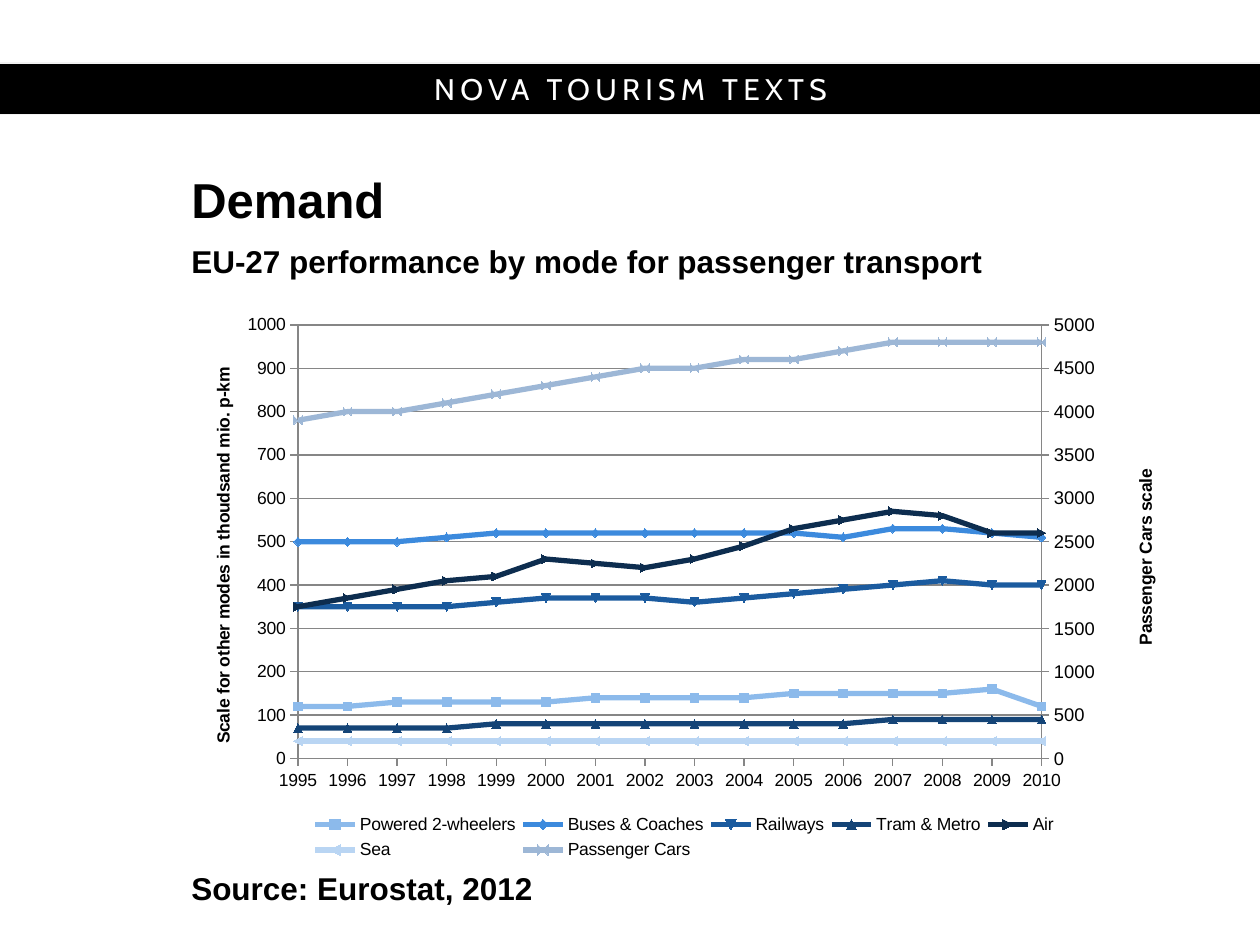
from copy import deepcopy

from lxml import etree
from pptx import Presentation
from pptx.chart.axis import ValueAxis
from pptx.chart.data import CategoryChartData as ChartData
from pptx.dml.color import RGBColor as RGB
from pptx.enum.chart import XL_CHART_TYPE as Kind, XL_LEGEND_POSITION as Side
from pptx.enum.chart import XL_TICK_MARK as Tick
from pptx.enum.shapes import MSO_SHAPE as Shape
from pptx.enum.text import MSO_ANCHOR as Anchor, PP_ALIGN as Align
from pptx.oxml.ns import qn
from pptx.util import Inches, Pt

COLORS = {
    "black": "000000", "white": "FFFFFF", "edge": "F2F2F2", "grid": "868686",
    "Powered 2-wheelers": "8CBAEB", "Buses & Coaches": "3C8ADD",
    "Railways": "1B5B9F", "Tram & Metro": "144477", "Air": "0D2D4F",
    "Sea": "B9D5F3", "Passenger Cars": "9DB7D6",
}
YEARS = [str(year) for year in range(1995, 2011)]
CARS = "Passenger Cars"
MODES = {
    "Powered 2-wheelers": [120, 120, 130, 130, 130, 130, 140, 140,
                           140, 140, 150, 150, 150, 150, 160, 120],
    "Buses & Coaches": [500, 500, 500, 510, 520, 520, 520, 520,
                        520, 520, 520, 510, 530, 530, 520, 510],
    "Railways": [350, 350, 350, 350, 360, 370, 370, 370,
                 360, 370, 380, 390, 400, 410, 400, 400],
    "Tram & Metro": [70] * 4 + [80] * 8 + [90] * 4,
    "Air": [350, 370, 390, 410, 420, 460, 450, 440,
            460, 490, 530, 550, 570, 560, 520, 520],
    "Sea": [40] * 16,
    CARS: [3900, 4000, 4000, 4100, 4200, 4300, 4400, 4500,
           4500, 4600, 4600, 4700, 4800, 4800, 4800, 4800],
}


def color(name):
    return RGB.from_string(COLORS[name])


def set_font(font, size, name="Arial", tint="black", bold=True):
    font.name, font.size, font.bold = name, Pt(size), bold
    font.color.rgb = color(tint)


def add_band(slide, text):
    band = slide.shapes.add_shape(Shape.RECTANGLE, Inches(-0.08), Inches(0.5),
                                  Inches(10.17), Inches(0.41))
    band.shadow.inherit = False
    band.fill.solid()
    band.fill.fore_color.rgb = color("black")
    band.line.color.rgb = color("edge")
    band.line.width = Pt(0.75)
    band.text_frame.vertical_anchor = Anchor.MIDDLE
    par = band.text_frame.paragraphs[0]
    par.text, par.alignment = text, Align.CENTER
    set_font(par.font, 17, "Cabin", "white", False)
    par.font._rPr.set("spc", "300")


def add_text(slide, text, top, high, size):
    box = slide.shapes.add_textbox(Inches(1.42), Inches(top),
                                   Inches(7.87), Inches(high))
    box.text_frame.word_wrap = True
    par = box.text_frame.paragraphs[0]
    par.text = text
    set_font(par.font, size)
    return box.text_frame


def add_node(parent, tag, val):
    return etree.SubElement(parent, qn(tag), val=str(val))


def set_layout(node, index, inner=False, **place):
    """Place a chart part by fractions of the chart's size."""
    for old in node.findall(qn("c:layout")):
        node.remove(old)
    layout = etree.Element(qn("c:layout"))
    node.insert(index, layout)
    manual = etree.SubElement(layout, qn("c:manualLayout"))
    if inner:
        add_node(manual, "c:layoutTarget", "inner")
    for key in "xy":
        add_node(manual, f"c:{key}Mode", "edge")
    for key, val in place.items():
        add_node(manual, f"c:{key}", val)


def split_axis(chart):
    """Move the last series to a second line plot with its own axes."""
    plot = chart.plots[0]._element
    area = plot.getparent()
    cat, val = area.find(qn("c:catAx")), area.find(qn("c:valAx"))
    if val.find(qn("c:crossBetween")) is None:
        between = etree.Element(qn("c:crossBetween"))
        val.find(qn("c:crosses")).addnext(between)
    val.find(qn("c:crossBetween")).set("val", "midCat")

    twin, cat2, val2 = deepcopy(plot), deepcopy(cat), deepcopy(val)
    for ser in twin.findall(qn("c:ser"))[:-1]:
        twin.remove(ser)
    plot.remove(plot.findall(qn("c:ser"))[-1])
    plot.addnext(twin)
    val.addnext(val2)
    val2.addnext(cat2)

    ids = ("5001", "5002")
    for node, new in zip(twin.findall(qn("c:axId")), ids):
        node.set("val", new)
    for axis, own, other in ((cat2, *ids), (val2, *ids[::-1])):
        axis.find(qn("c:axId")).set("val", own)
        axis.find(qn("c:crossAx")).set("val", other)
    cat2.find(qn("c:delete")).set("val", "1")
    val2.find(qn("c:axPos")).set("val", "r")
    val2.find(qn("c:crosses")).set("val", "max")
    return ValueAxis(val2)


def style_axis(axis, size):
    axis.major_tick_mark, axis.minor_tick_mark = Tick.OUTSIDE, Tick.NONE
    axis.format.line.color.rgb = color("grid")
    set_font(axis.tick_labels.font, size, bold=False)


def style_scale(axis, size, top, step, title, x, y):
    style_axis(axis, size)
    axis.minimum_scale, axis.maximum_scale = 0, top
    axis.major_unit = step
    frame = axis.axis_title.text_frame
    frame.text = title
    set_font(frame.paragraphs[0].font, 10)
    frame._txBody.bodyPr.set("rot", "-5400000")
    frame._txBody.bodyPr.set("vert", "horz")
    set_layout(axis.axis_title._element, 1, x=x, y=y)


def add_lines(slide):
    data = ChartData(number_format="General")
    data.categories = YEARS
    for name, vals in MODES.items():
        data.add_series(name, vals)
    chart = slide.shapes.add_chart(
        Kind.LINE_MARKERS, Inches(1.42), Inches(2.4),
        Inches(7.87), Inches(4.47), data).chart
    chart.has_title = False
    set_font(chart.font, 18, bold=False)
    chart.plots[0].vary_by_categories = False
    for ser in chart.plots[0].series:
        ser.smooth = False
        ser.format.line.width = Pt(3)
        ser.format.line.color.rgb = color(ser.name)
        fill = ser.marker.format.fill
        fill.solid()
        fill.fore_color.rgb = color(ser.name)

    left = chart.value_axis
    left.has_major_gridlines = False
    right = split_axis(chart)
    left.has_major_gridlines = True
    left.major_gridlines.format.line.color.rgb = color("grid")
    style_axis(chart.category_axis, 10)
    style_scale(left, 10, 1000, 100,
                "Scale for other modes in thoudsand mio. p-km", 0.03, 0.11)
    style_scale(right, 10.5, 5000, 500, "Passenger Cars scale", 0.96, 0.29)

    chart.has_legend = True
    chart.legend.position = Side.BOTTOM
    chart.legend.include_in_layout = False
    set_font(chart.legend.font, 10, bold=False)
    set_layout(chart.legend._element, 1, x=0.13, y=0.9, w=0.76, h=0.1)
    area = chart.plots[0]._element.getparent()
    set_layout(area, 0, True, x=0.12, y=0.04, w=0.75, h=0.77)


def main():
    deck = Presentation()
    deck.slide_width, deck.slide_height = Inches(10), Inches(7.5)
    slide = deck.slides.add_slide(deck.slide_layouts[6])
    add_band(slide, "NOVA TOURISM TEXTS")
    add_text(slide, "Source: Eurostat, 2012", 6.85, 0.4, 18)
    title = add_text(slide, "Demand", 1.35, 0.48, 28)
    title.vertical_anchor = Anchor.MIDDLE
    title.paragraphs[0].line_spacing = Pt(32)
    add_text(slide, "EU-27 performance by mode for passenger transport",
             1.87, 0.4, 18)
    add_lines(slide)
    deck.save("out.pptx")


if __name__ == "__main__":
    main()
